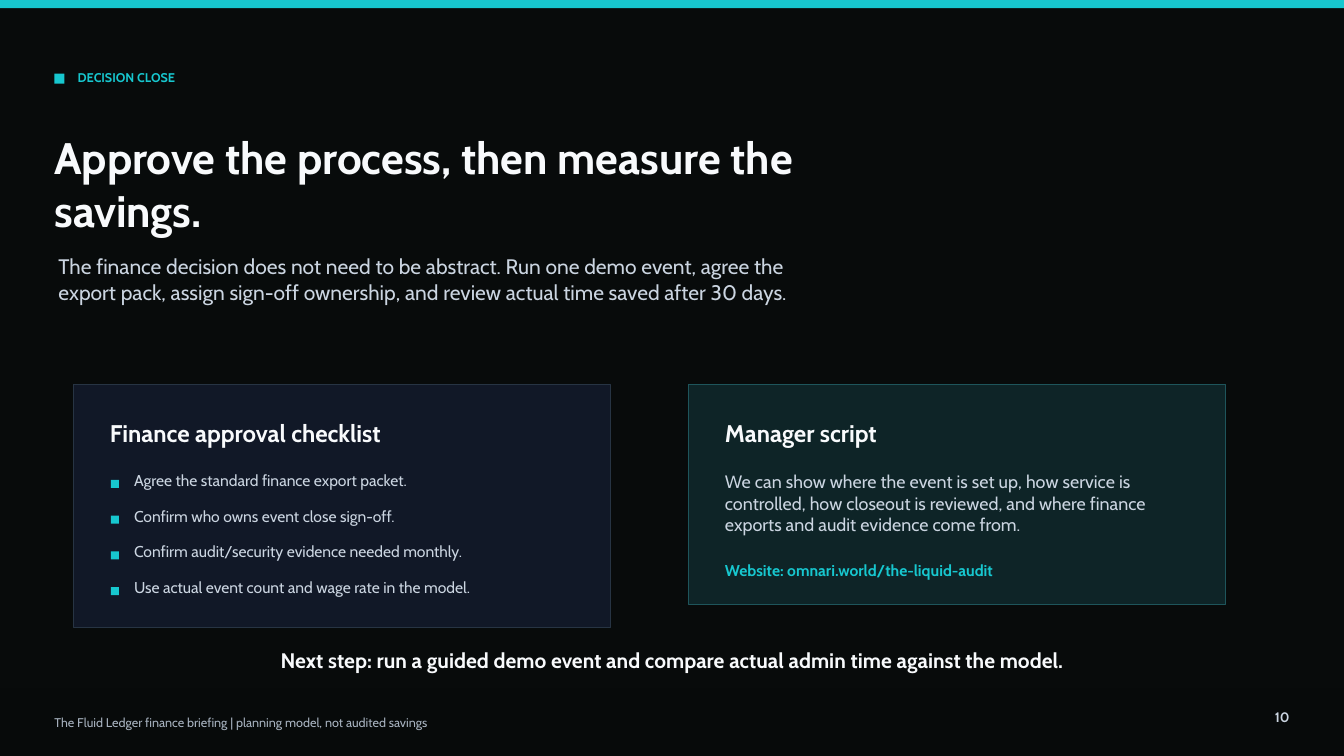
from pptx import Presentation
from pptx.dml.color import RGBColor
from pptx.enum.shapes import MSO_SHAPE
from pptx.enum.text import MSO_ANCHOR, MSO_AUTO_SIZE, PP_ALIGN
from pptx.util import Inches, Pt

INK = RGBColor(0x08, 0x0B, 0x0B)
FOOTER_INK = RGBColor(0x07, 0x0A, 0x0A)
CYAN = RGBColor(0x17, 0xC7, 0xCF)
WHITE = RGBColor(0xF8, 0xFA, 0xFC)
SILVER = RGBColor(0xCB, 0xD5, 0xE1)
GREY = RGBColor(0xA7, 0xB2, 0xBF)
NAVY = RGBColor(0x11, 0x18, 0x27)
NAVY_EDGE = RGBColor(0x27, 0x34, 0x43)
TEAL = RGBColor(0x0E, 0x24, 0x27)
TEAL_EDGE = RGBColor(0x1E, 0x55, 0x5B)

CHECKLIST = [
    "Agree the standard finance export packet.",
    "Confirm who owns event close sign-off.",
    "Confirm audit/security evidence needed monthly.",
    "Use actual event count and wage rate in the model.",
]
ROW_TOP, ROW_STEP = 4.67, 0.355


class SlideBuilder:
    font = "Cabin"

    def __init__(self, prs):
        self.s = prs.slides.add_slide(prs.slide_layouts[5])
        fill = self.s.background.fill
        fill.solid()
        fill.fore_color.rgb = INK

    def rect(self, x, y, w, h, color, edge=None):
        sp = self.s.shapes.add_shape(
            MSO_SHAPE.RECTANGLE, Inches(x), Inches(y), Inches(w), Inches(h))
        sp.shadow.inherit = False
        sp.fill.solid()
        sp.fill.fore_color.rgb = color
        if edge is None:
            sp.line.fill.background()
        else:
            sp.line.color.rgb = edge
            sp.line.width = Pt(0.75)

    def set_text(self, sp, text, size, color, bold, align):
        tf = sp.text_frame
        frame_format = {
            "margin_left": 0, "margin_top": 0, "margin_right": 0,
            "margin_bottom": 0, "word_wrap": True,
            "auto_size": MSO_AUTO_SIZE.NONE,
            "vertical_anchor": MSO_ANCHOR.TOP,
        }
        for name, value in frame_format.items():
            setattr(tf, name, value)
        p = tf.paragraphs[0]
        p.alignment = align
        r = p.add_run()
        r.text = text
        run_format = {"name": self.font, "size": Pt(size), "bold": bold}
        for name, value in run_format.items():
            setattr(r.font, name, value)
        r.font.color.rgb = color

    def text(self, x, y, w, h, text, size, color, bold=False,
             align=PP_ALIGN.LEFT):
        sp = self.s.shapes.add_textbox(
            Inches(x), Inches(y), Inches(w), Inches(h))
        self.set_text(sp, text, size, color, bold, align)

    def title(self, x, y, w, h, text, size):
        sp = self.s.shapes.title
        box = {"left": x, "top": y, "width": w, "height": h}
        for name, value in box.items():
            setattr(sp, name, Inches(value))
        self.set_text(sp, text, size, WHITE, True, PP_ALIGN.LEFT)

    def card(self, x, h, heading, color, edge):
        self.rect(x, 3.81, 5.33, h, color, edge)
        self.text(x + 0.36, 4.15, 3.75, 0.27, heading, 17.2, WHITE, True)

    def check_item(self, y, text):
        self.rect(1.1, y + 0.09, 0.08, 0.08, CYAN)
        self.text(1.33, y, 3.96, 0.31, text, 11.2, SILVER)


def main():
    prs = Presentation()
    prs.slide_width, prs.slide_height = Inches(13.33), Inches(7.5)
    b = SlideBuilder(prs)

    b.rect(0, 0, 13.33, 0.08, CYAN)
    b.rect(0, 6.83, 13.33, 0.67, FOOTER_INK)
    b.text(0.54, 7.09, 7.71, 0.19,
           "The Fluid Ledger finance briefing | planning model, not audited savings",
           9, GREY)
    b.text(12.27, 7.03, 0.52, 0.23, "10", 9.8, SILVER, True, PP_ALIGN.RIGHT)

    b.rect(0.54, 0.73, 0.1, 0.1, CYAN)
    b.text(0.77, 0.69, 3.75, 0.19, "DECISION CLOSE", 9, CYAN, True)
    b.title(0.54, 1.29, 8.85, 1,
            "Approve the process, then measure the savings.", 31.5)
    b.text(0.58, 2.52, 7.5, 0.77,
           "The finance decision does not need to be abstract. Run one demo "
           "event, agree the export pack, assign sign-off ownership, and "
           "review actual time saved after 30 days.", 15, SILVER)

    b.card(0.73, 2.42, "Finance approval checklist", NAVY, NAVY_EDGE)
    for i, item in enumerate(CHECKLIST):
        b.check_item(ROW_TOP + i * ROW_STEP, item)

    b.card(6.83, 2.19, "Manager script", TEAL, TEAL_EDGE)
    b.text(7.19, ROW_TOP, 4.38, 0.77,
           "We can show where the event is set up, how service is controlled, "
           "how closeout is reviewed, and where finance exports and audit "
           "evidence come from.", 12.8, SILVER)
    b.text(7.19, 5.56, 4.38, 0.23,
           "Website: omnari.world/the-liquid-audit", 11.2, CYAN, True)

    b.text(1.77, 6.42, 9.79, 0.27,
           "Next step: run a guided demo event and compare actual admin time "
           "against the model.", 15, WHITE, True, PP_ALIGN.CENTER)
    prs.save("out.pptx")


if __name__ == "__main__":
    main()
